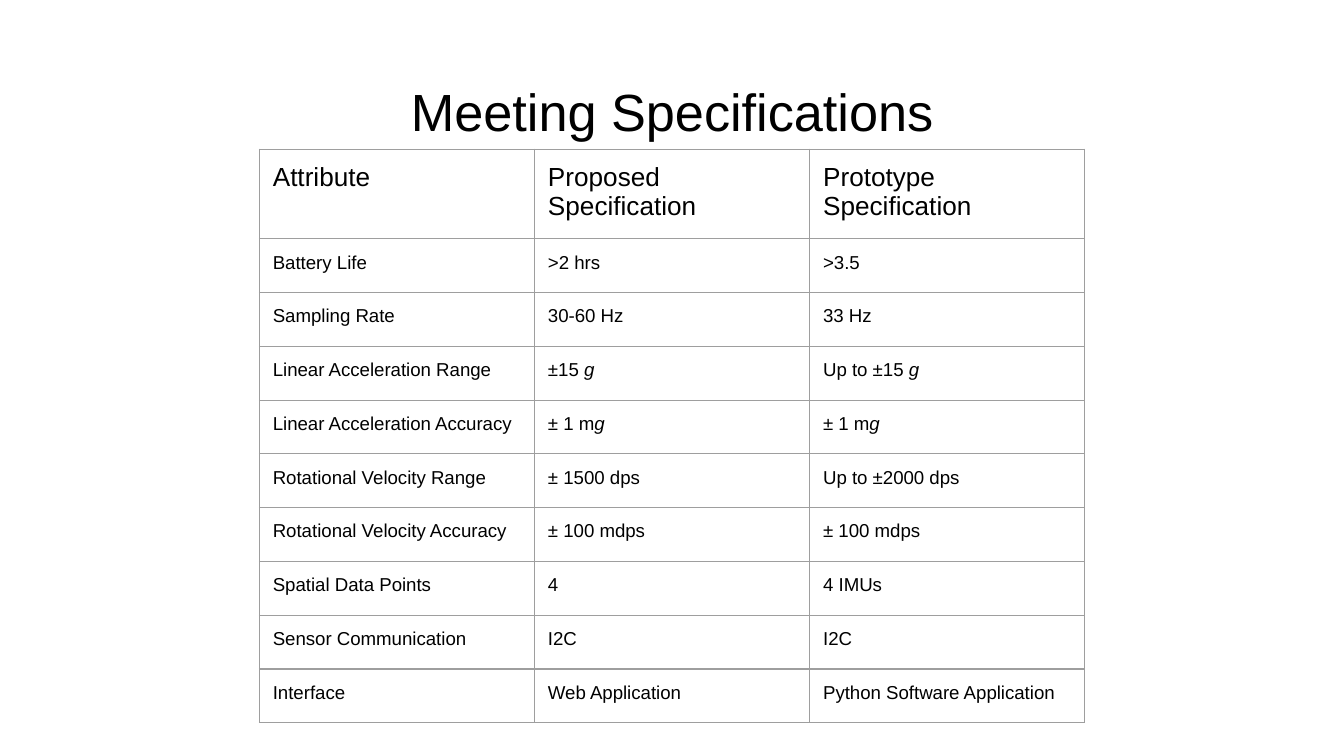
from pptx import Presentation
from pptx import util as u
from pptx.dml.color import RGBColor
from pptx.enum import text
from pptx.oxml import parse_xml
from pptx.oxml.ns import nsdecls

colors = {"ink": "000000", "grid": "9E9E9E"}
font_name = "Arial"
inset = u.Inches(0.1)
side_margin = u.Inches(0.34)
frame_side = u.Inches(3.28)
col_width, row_height = u.Mm(52), u.Inches(0.4)

specs = [
    ["Attribute", "Proposed Specification", "Prototype Specification"],
    ["Battery Life", ">2 hrs", ">3.5"],
    ["Sampling Rate", "30-60 Hz", "33 Hz"],
    ["Linear Acceleration Range", ("±15 ", "g"), ("Up to ±15 ", "g")],
    ["Linear Acceleration Accuracy", ("± 1 m", "g"), ("± 1 m", "g")],
    ["Rotational Velocity Range", "± 1500 dps", "Up to ±2000 dps"],
    ["Rotational Velocity Accuracy", "± 100 mdps", "± 100 mdps"],
    ["Spatial Data Points", "4", "4 IMUs"],
    ["Sensor Communication", "I2C", "I2C"],
    ["Interface", "Web Application", "Python Software Application"],
]


def add_run(paragraph, words, size, italic=False):
    run = paragraph.add_run()
    run.text = words
    run.font.name = font_name
    run.font.size = u.Pt(size)
    run.font.italic = italic
    run.font.color.rgb = RGBColor.from_string(colors["ink"])


def add_borders(cell):
    for side in ("lnL", "lnR", "lnT", "lnB"):
        cell._tc.get_or_add_tcPr().append(parse_xml(
            f'<a:{side} {nsdecls("a")} w="{u.Pt(0.75)}"><a:solidFill>'
            f'<a:srgbClr val="{colors["grid"]}"/></a:solidFill></a:{side}>'))


deck = Presentation()
deck.slide_width = u.Inches(10)
deck.slide_height = deck.slide_width * 9 // 16
slide = deck.slides.add_slide(deck.slide_layouts[6])

heading = slide.shapes.add_textbox(
    side_margin, u.Inches(0.49), deck.slide_width - 2 * side_margin, u.Inches(0.63)
).text_frame
heading.word_wrap = True
heading.vertical_anchor = text.MSO_ANCHOR.TOP
heading.margin_left = heading.margin_right = inset
heading.margin_top = heading.margin_bottom = inset
heading.paragraphs[0].alignment = text.PP_ALIGN.CENTER
add_run(heading.paragraphs[0], "Meeting Specifications", 28)

spec_sheet = slide.shapes.add_table(
    len(specs), len(specs[0]), u.Inches(1.93), u.Inches(1.11), frame_side, frame_side)
grid = spec_sheet.table
grid.first_row = grid.horz_banding = False
for column in grid.columns:
    column.width = col_width
for row in grid.rows:
    row.height = row_height
spec_sheet.width = spec_sheet.height = frame_side

for r, entries in enumerate(specs):
    for c, entry in enumerate(entries):
        cell = grid.cell(r, c)
        cell.margin_left = cell.margin_right = inset
        cell.margin_top = cell.margin_bottom = inset
        add_borders(cell)
        cell.fill.background()
        value, *unit = [entry] if isinstance(entry, str) else entry
        size = 10 if r else 14
        paragraph = cell.text_frame.paragraphs[0]
        add_run(paragraph, value, size)
        for symbol in unit:
            add_run(paragraph, symbol, size, italic=True)

deck.save("out.pptx")
